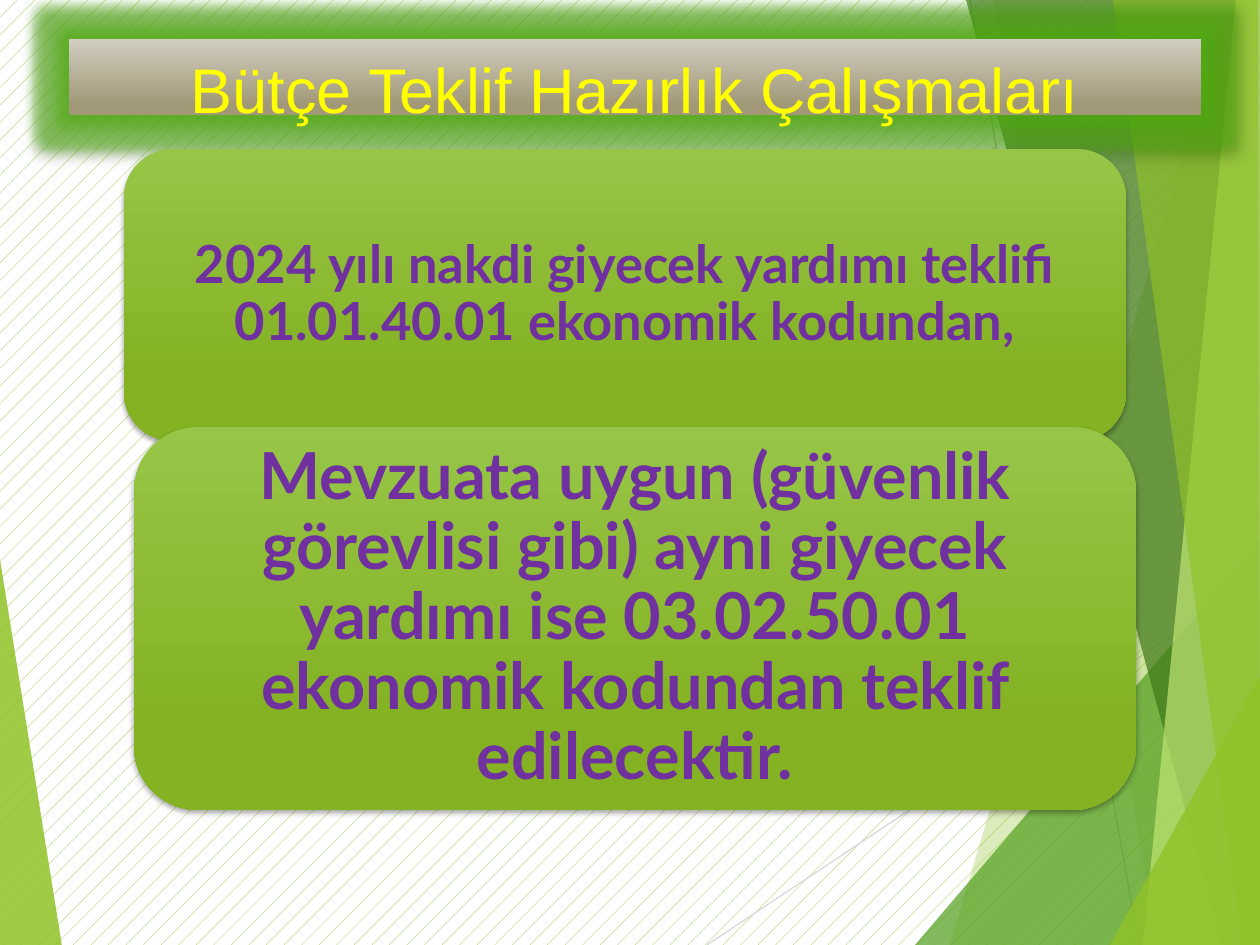
import lxml.etree
import pptx
import pptx.dml.color
import pptx.enum.dml
import pptx.enum.shapes
import pptx.enum.text
import pptx.oxml.ns
import pptx.util

RGB = pptx.dml.color.RGBColor
SCALE = 914400 / 126  # EMU in one px
WIDTH, HEIGHT = 1260, 945

WHITE = RGB(0xFF, 0xFF, 0xFF)
BLACK = RGB(0x00, 0x00, 0x00)
LIME = RGB(0x90, 0xC2, 0x26)
PALE_LIME = RGB(0xC0, 0xE4, 0x74)
GREEN = RGB(0x54, 0xA0, 0x21)
DARK_GREEN = RGB(0x3F, 0x78, 0x19)
GLOW_GREEN = RGB(0x50, 0xAD, 0x10)
LIGHT_GREY = RGB(0xD9, 0xD9, 0xD9)
MID_GREY = RGB(0xBF, 0xBF, 0xBF)
YELLOW = RGB(0xFF, 0xFF, 0x00)
PURPLE = RGB(0x70, 0x30, 0xA0)
BANNER_STOPS = ((0, RGB(0xD1, 0xCD, 0xC0)), (0.88, RGB(0xA1, 0x98, 0x77)))
CARD_STOPS = ((0, RGB(0x97, 0xC5, 0x47)), (0.78, RGB(0x84, 0xB2, 0x23)))

# Facets of the right-hand decoration: outline, colour, opacity in percent
FACETS = (
    (((1229, 0), (950, 945), (1262, 945), (1261, 0)), LIME, 30),
    (((993, 0), (1158, 945), (1261, 945), (1261, 0)), LIME, 20),
    (((915, 945), (1260, 541), (1261, 945)), GREEN, 72),
    (((966, 0), (1222, 945), (1261, 945), (1261, 0)), DARK_GREEN, 70),
    (((1236, 0), (1143, 945), (1261, 945), (1260, 0)), PALE_LIME, 70),
    (((1113, 0), (1242, 945), (1260, 945), (1258, 0)), LIME, 65),
    (((1110, 945), (1261, 674), (1261, 945)), LIME, 80),
)
LEFT_FACET = (((-1, 553), (62, 946), (-1, 945)), LIME, 85)
THIN_LINES = (
    ((707, 945), (1261, 576), LIGHT_GREY),
    ((970, 0), (1139, 945), MID_GREY),
)


def emu(px):
    return pptx.util.Emu(round(px * SCALE))


def set_all(target, values):
    for name, value in values.items():
        setattr(target, name, value)


def add_child(parent, tag, **attributes):
    child = lxml.etree.SubElement(parent, pptx.oxml.ns.qn(tag))
    for name, value in attributes.items():
        child.set(name, str(value))
    return child


def add_effect(shape, tag, color, opacity, **attributes):
    effects = shape._element.spPr.find(pptx.oxml.ns.qn("a:effectLst"))
    effect = add_child(effects, tag, **attributes)
    shade = add_child(effect, "a:srgbClr", val=color)
    add_child(shade, "a:alpha", val=opacity * 1000)


def add_facet(slide, outline, color, opacity):
    points = [(emu(x), emu(y)) for x, y in outline]
    builder = slide.shapes.build_freeform(*points[0])
    builder.add_line_segments(points[1:], close=True)
    facet = builder.convert_to_shape()
    facet.shadow.inherit = False
    facet.line.fill.background()
    facet.fill.solid()
    facet.fill.fore_color.rgb = color
    shade = facet._element.spPr.find(".//" + pptx.oxml.ns.qn("a:srgbClr"))
    add_child(shade, "a:alpha", val=opacity * 1000)


def add_backdrop(slide):
    fill = slide.background.fill
    fill.patterned()
    fill.pattern = pptx.enum.dml.MSO_PATTERN.PERCENT_5
    fill.fore_color.rgb = LIME
    fill.back_color.rgb = WHITE

    add_facet(slide, *LEFT_FACET)
    for start, end, color in THIN_LINES:
        thin_line = slide.shapes.add_connector(
            pptx.enum.shapes.MSO_CONNECTOR.STRAIGHT, *map(emu, start + end))
        thin_line.line.color.rgb = color
        thin_line.line.width = pptx.util.Pt(0.75)
        add_child(thin_line._element.spPr, "a:effectLst")
    for facet in FACETS:
        add_facet(slide, *facet)


def add_panel(slide, box, preset, stops, text, frame_format, font_format, line_spacing):
    """Place a shape with a downward gradient and one centred paragraph."""
    panel = slide.shapes.add_shape(preset, *map(emu, box))
    panel.shadow.inherit = False
    panel.line.fill.background()
    panel.fill.gradient()
    panel.fill.gradient_angle = 270
    for stop, (position, color) in zip(panel.fill.gradient_stops, stops):
        stop.position = position
        stop.color.rgb = color

    set_all(panel.text_frame, {"word_wrap": True, **frame_format})
    paragraph = panel.text_frame.paragraphs[0]
    set_all(paragraph, {"alignment": pptx.enum.text.PP_ALIGN.CENTER,
                        "line_spacing": line_spacing})
    run = paragraph.add_run()
    run.text = text
    color = font_format.pop("color")
    set_all(run.font, font_format)
    run.font.color.rgb = color
    return panel


def add_title(slide, box, text):
    banner = add_panel(
        slide, box, pptx.enum.shapes.MSO_SHAPE.RECTANGLE, BANNER_STOPS, text,
        {"vertical_anchor": pptx.enum.text.MSO_ANCHOR.TOP,
         "margin_top": emu(12), "margin_bottom": 0},
        {"name": "Arial", "size": pptx.util.Pt(36), "color": YELLOW}, 1.0)
    add_effect(banner, "a:glow", GLOW_GREEN, 60, rad=pptx.util.Pt(14))
    add_effect(banner, "a:outerShdw", BLACK, 32, blurRad=pptx.util.Pt(3.5),
               dist=pptx.util.Pt(2.2), dir=5400000, rotWithShape=0)


def add_card(slide, box, text, size, side_margin):
    margins = {"margin_left": side_margin, "margin_right": side_margin,
               "margin_top": side_margin // 2, "margin_bottom": side_margin // 2}
    card = add_panel(
        slide, box, pptx.enum.shapes.MSO_SHAPE.ROUNDED_RECTANGLE, CARD_STOPS, text,
        {"vertical_anchor": pptx.enum.text.MSO_ANCHOR.MIDDLE,
         **{name: emu(px) for name, px in margins.items()}},
        {"name": "Lato", "size": pptx.util.Pt(size), "bold": True, "color": PURPLE}, 0.9)
    add_effect(card, "a:outerShdw", BLACK, 35, blurRad=pptx.util.Pt(3),
               dist=pptx.util.Pt(2), dir=5400000, rotWithShape=0)


def main():
    deck = pptx.Presentation()
    set_all(deck, {"slide_width": emu(WIDTH), "slide_height": emu(HEIGHT)})
    slide = deck.slides.add_slide(deck.slide_layouts[6])
    add_backdrop(slide)
    add_title(slide, (69, 39, 1132, 76), "Bütçe Teklif Hazırlık Çalışmaları")
    add_card(slide, (124, 149, 1002, 292),
             "2024 yılı nakdi giyecek yardımı teklifi 01.01.40.01 ekonomik kodundan,",
             30, 15)
    add_card(slide, (134, 427, 1002, 383),
             "Mevzuata uygun (güvenlik görevlisi gibi) ayni giyecek yardımı ise "
             "03.02.50.01 ekonomik kodundan teklif edilecektir.",
             37, 19)
    deck.save("out.pptx")


if __name__ == "__main__":
    main()
